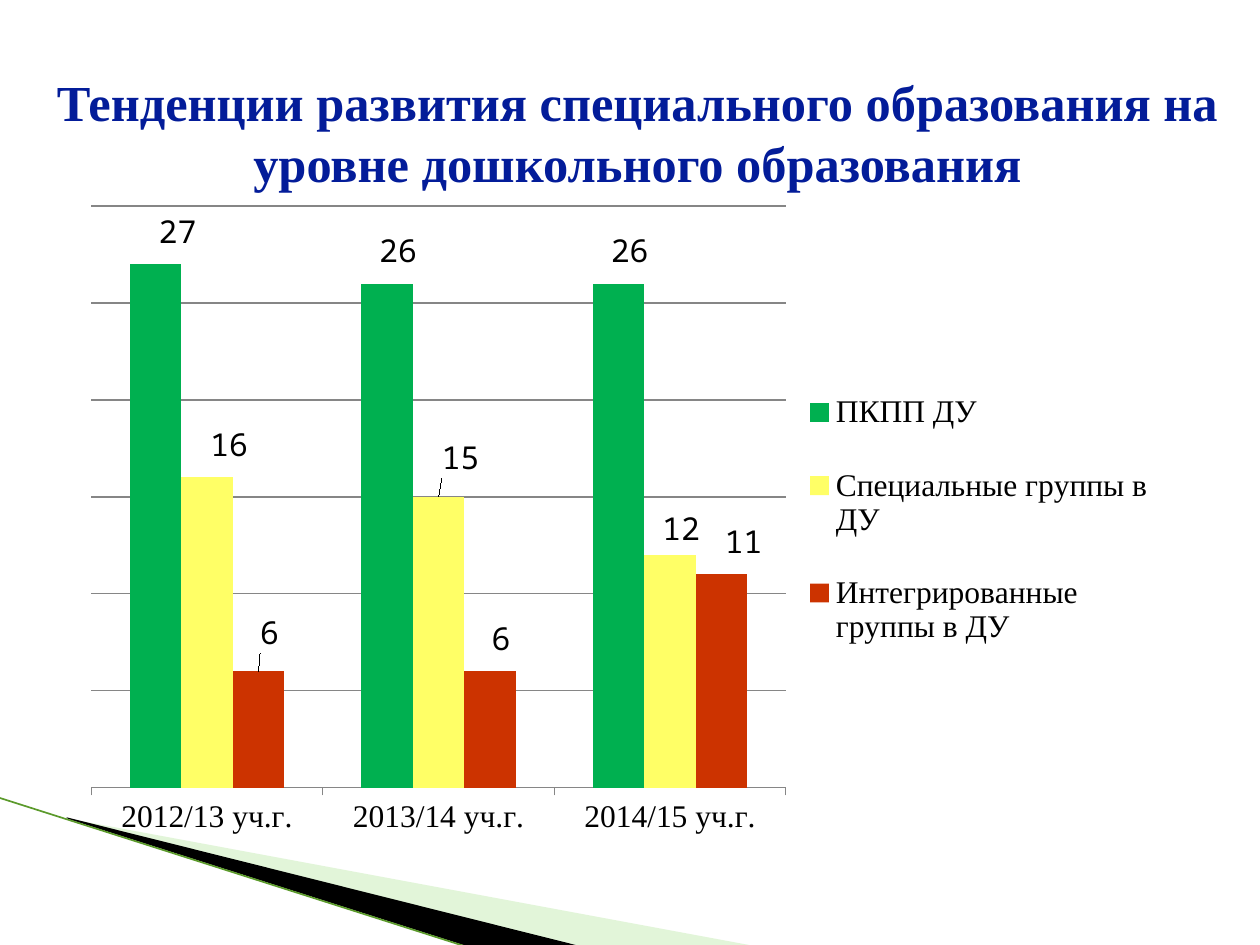
import pptx
import pptx.util
import pptx.dml.color
import pptx.chart.data
import pptx.enum.chart
import pptx.enum.shapes
import pptx.enum.text
import pptx.oxml
import pptx.oxml.ns
from lxml import etree

Pt = pptx.util.Pt
qn = pptx.oxml.ns.qn
enums = pptx.enum.chart
SERIF = "Times New Roman"


def paint(color, value):
    color.rgb = pptx.dml.color.RGBColor.from_string(value)


def place(parent, index, **values):
    """Insert a manual chart layout as the given child of parent."""
    for old in parent.findall(qn("c:layout")):
        parent.remove(old)
    layout = etree.Element(qn("c:layout"))
    manual = etree.SubElement(layout, qn("c:manualLayout"))
    for tag, value in values.items():
        etree.SubElement(manual, qn("c:" + tag)).set("val", str(value))
    parent.insert(index, layout)


deck = pptx.Presentation()
deck.slide_width, deck.slide_height = Pt(720), Pt(540)
slide = deck.slides.add_slide(deck.slide_layouts[5])
shapes = slide.shapes

# Corner wedges
wedges = [
    ("B8E7A1", 40, [(39.6, 468.5), (428.4, 540.5), (328.3, 540.5), (39.6, 468)]),
    ("000000", 100, [(38.2, 467.3), (329, 540.5), (267.8, 541.2), (38.9, 468)]),
]
for color, alpha, points in wedges:
    pen = shapes.build_freeform(*points[0], scale=Pt(1))
    pen.add_line_segments(points[1:], close=True)
    wedge = pen.convert_to_shape()
    wedge.shadow.inherit = False
    wedge.fill.solid()
    paint(wedge.fill.fore_color, color)
    wedge.line.fill.background()
    if alpha < 100:
        tint = wedge.fill._xPr.find(".//" + qn("a:srgbClr"))
        etree.SubElement(tint, qn("a:alpha")).set("val", str(alpha * 1000))

# Corner line
edge = shapes.add_connector(
    pptx.enum.shapes.MSO_CONNECTOR.STRAIGHT, Pt(-0.7), Pt(455.8), Pt(267.8), Pt(541.4))
paint(edge.line.color, "5B9A2B")
edge.line.width = Pt(0.95)
etree.SubElement(edge._element.spPr, qn("a:effectLst"))

# Title
title = shapes.title
title.left, title.top, title.width, title.height = Pt(8.6), Pt(38.9), Pt(711.4), Pt(72.7)
frame = title.text_frame
frame.text = "Тенденции развития специального образования на уровне дошкольного образования"
frame.word_wrap = True
frame.auto_size = pptx.enum.text.MSO_AUTO_SIZE.NONE
frame.vertical_anchor = pptx.enum.text.MSO_ANCHOR.MIDDLE
head = frame.paragraphs[0]
head.alignment = pptx.enum.text.PP_ALIGN.CENTER
head.font.name, head.font.size, head.font.bold = SERIF, Pt(28.8), True
paint(head.font.color, "031C99")

# Chart data: name, colour, values, label shifts as shares of the chart
rows = [
    ("ПКПП ДУ", "00B050", (27, 26, 26),
     [(0.02, -0.01), (0.01, -0.01), (0.01, -0.01)]),
    ("Специальные группы в ДУ", "FFFF66", (16, 15, 12),
     [(0.02, -0.01), (0.02, -0.02), (0.01, 0)]),
    ("Интегрированные группы в ДУ", "CC3300", (6, 6, 11),
     [(0.01, -0.02), (0.01, -0.01), (0.02, -0.01)]),
]
data = pptx.chart.data.CategoryChartData()
data.categories = ["2012/13 уч.г.", "2013/14 уч.г.", "2014/15 уч.г."]
for name, color, values, shifts in rows:
    data.add_series(name, values)

# Chart
chart = shapes.add_chart(
    enums.XL_CHART_TYPE.COLUMN_CLUSTERED,
    Pt(39.6), Pt(110.2), Pt(630), Pt(373.7), data).chart
chart.has_title = False
chart.font.name, chart.font.size = "Noto Sans Mono", Pt(18)
paint(chart.font.color, "000000")
plot = chart.plots[0]
plot.gap_width, plot.overlap, plot.vary_by_categories = 150, 0, False
area = chart._chartSpace.find(".//" + qn("c:plotArea"))
place(area, 0, layoutTarget="inner", xMode="edge", yMode="edge",
      x=0.02, y=0.02, w=0.63, h=0.89)

# Columns and their labels
for series, (name, color, values, shifts) in zip(plot.series, rows):
    series.format.fill.solid()
    paint(series.format.fill.fore_color, color)
    series.data_labels.show_value = True
    for index, (dx, dy) in enumerate(shifts):
        label = series.points[index].data_label
        label.position = enums.XL_LABEL_POSITION.OUTSIDE_END
        label.font.name, label.font.size = "Noto Sans Mono", Pt(18)
        place(label._dLbl, 1, x=dx, y=dy)

# Axes
years, scale = chart.category_axis, chart.value_axis
years.tick_labels.font.name, years.tick_labels.font.size = SERIF, Pt(18)
years.major_tick_mark = enums.XL_TICK_MARK.OUTSIDE
scale.minimum_scale, scale.maximum_scale, scale.major_unit = 0, 30, 5
scale.visible = False
scale.has_major_gridlines = True
for line in (years.format.line, scale.major_gridlines.format.line):
    paint(line.color, "868686")
    line.width = Pt(0.75)

# Legend
chart.has_legend = True
legend = chart.legend
legend.position = enums.XL_LEGEND_POSITION.RIGHT
legend.include_in_layout = False
legend.font.name, legend.font.size = SERIF, Pt(18)
place(legend._element, 1, xMode="edge", yMode="edge", x=0.66, y=0.25, w=0.33, h=0.5)

deck.save("out.pptx")
